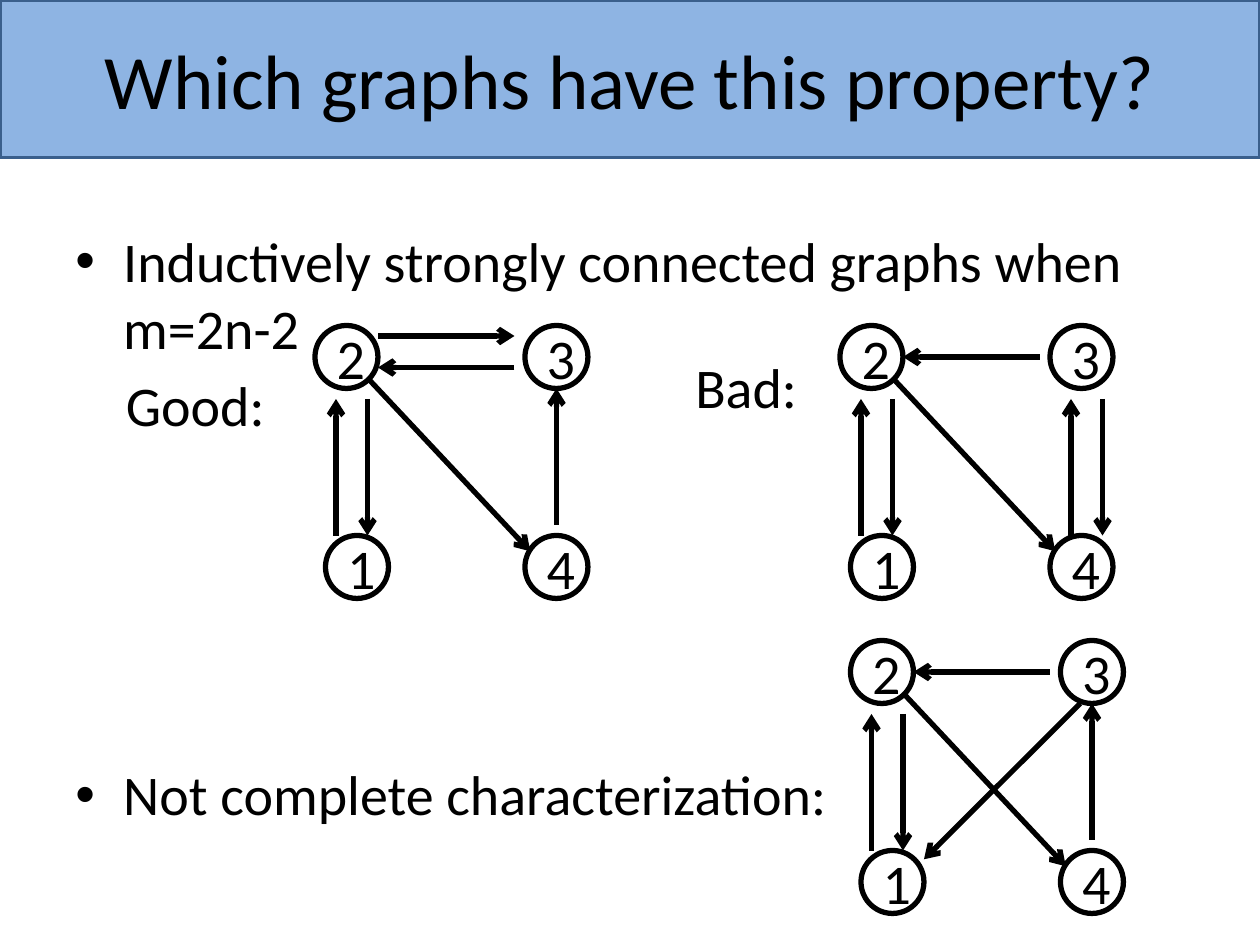
from pptx import Presentation
from pptx.dml.color import RGBColor
from pptx.enum.shapes import MSO_CONNECTOR as Link, MSO_SHAPE as Shape
from pptx.enum.text import MSO_ANCHOR as Anchor, PP_ALIGN as Align
from pptx.oxml.ns import qn
from pptx.util import Inches, Pt
from lxml.etree import SubElement

COLORS = {"banner": "8EB4E3", "banner_edge": "3A5F8C", "ink": "000000"}
FONT = "Calibri"
CELLS_PER_INCH = 12  # the graphs sit on a grid of twelfths of an inch
NODE_SIZE = 6

# Node corners, in cells from the corner of node 2
NODES = {"1": (1, 20), "2": (0, 0), "3": (20, 0), "4": (20, 20)}

# Edges as (from column, from row, to column, to row)
COMMON_EDGES = [
    (2, 20, 2, 7),            # 1 to 2
    (5, 7, 5, 20),            # 2 to 1
    (5.12, 5.12, 20.5, 21.5),  # 2 to 4
]
THREE_TO_TWO = (19, 3, 6, 3)
FOUR_TO_THREE = (23, 19, 23, 6)

# Graph origin (column, row) and the edges that set it apart
GRAPHS = [
    ((30, 31), [(6, 1, 19, 1), (19, 4, 6, 4), FOUR_TO_THREE]),
    ((80, 31), [THREE_TO_TWO, (22, 20, 22, 7), (25, 7, 25, 20)]),
    ((81, 61), [THREE_TO_TWO, FOUR_TO_THREE, (21.88, 6, 7, 20.84)]),
]


def rgb(name):
    return RGBColor.from_string(COLORS[name])


def cells(count):
    return Inches(count / CELLS_PER_INCH)


def write(frame, text, size=32, align=Align.LEFT, anchor=Anchor.TOP,
          before=0, margin=0, bullet=False, append=False):
    """Write one paragraph into a text frame."""
    frame.word_wrap = True
    frame.vertical_anchor = anchor
    line = frame.add_paragraph() if append else frame.paragraphs[0]
    line.alignment = align
    line.space_before = Pt(before)
    run = line.add_run()
    run.text = text
    run.font.name = FONT
    run.font.size = Pt(size)
    run.font.color.rgb = rgb("ink")
    props = line._p.get_or_add_pPr()
    props.set("marL", str(Inches(margin)))
    props.set("indent", str(-Inches(margin) if bullet else 0))
    if bullet:
        SubElement(props, qn("a:buFont")).set("typeface", "Arial")
        SubElement(props, qn("a:buChar")).set("char", "•")


def text_frame(slide, left, top, width, height):
    box = slide.shapes.add_textbox(*map(Inches, (left, top, width, height)))
    return box.text_frame


def add_banner(slide, width):
    banner = slide.shapes.add_shape(Shape.RECTANGLE, 0, 0, width, Inches(1.25))
    banner.shadow.inherit = False
    banner.fill.solid()
    banner.fill.fore_color.rgb = rgb("banner")
    banner.line.color.rgb = rgb("banner_edge")
    banner.line.width = Pt(2)
    write(text_frame(slide, 0.5, 0, 9, 1.25), "Which graphs have this property?",
          size=44, align=Align.CENTER, anchor=Anchor.MIDDLE)


def add_node(slide, label, column, row):
    node = slide.shapes.add_shape(Shape.OVAL, cells(column), cells(row),
                                  cells(NODE_SIZE), cells(NODE_SIZE))
    node.shadow.inherit = False
    node.fill.background()
    node.line.color.rgb = rgb("ink")
    node.line.width = Pt(3)
    write(node.text_frame, label, align=Align.CENTER, anchor=Anchor.MIDDLE)


def add_edge(slide, *ends):
    edge = slide.shapes.add_connector(Link.STRAIGHT, *map(cells, ends))
    edge.line.color.rgb = rgb("ink")
    edge.line.width = Pt(3)
    SubElement(edge.line._get_or_add_ln(), qn("a:tailEnd")).set("type", "arrow")
    SubElement(edge._element.spPr, qn("a:effectLst"))


def add_graph(slide, origin, own_edges):
    column, row = origin
    for x1, y1, x2, y2 in COMMON_EDGES + own_edges:
        add_edge(slide, column + x1, row + y1, column + x2, row + y2)
    for label, (x, y) in NODES.items():
        add_node(slide, label, column + x, row + y)


def main():
    deck = Presentation()
    deck.slide_width, deck.slide_height = Inches(10), Inches(7.5)
    slide = deck.slides.add_slide(deck.slide_layouts[6])

    # Title
    add_banner(slide, deck.slide_width)

    # Statements, with room for the graphs between them
    body = text_frame(slide, 0.5, 1.75, 9, 4.95)
    write(body, "Inductively strongly connected graphs when m=2n-2",
          margin=0.38, bullet=True)
    write(body, "Good:", before=5.5, margin=0.4, append=True)
    write(body, "Not complete characterization:", before=184,
          margin=0.38, bullet=True, append=True)
    write(text_frame(slide, 5.42, 2.75, 1.25, 0.64), "Bad:")

    # Graphs
    for origin, own_edges in GRAPHS:
        add_graph(slide, origin, own_edges)

    deck.save("out.pptx")


if __name__ == "__main__":
    main()
